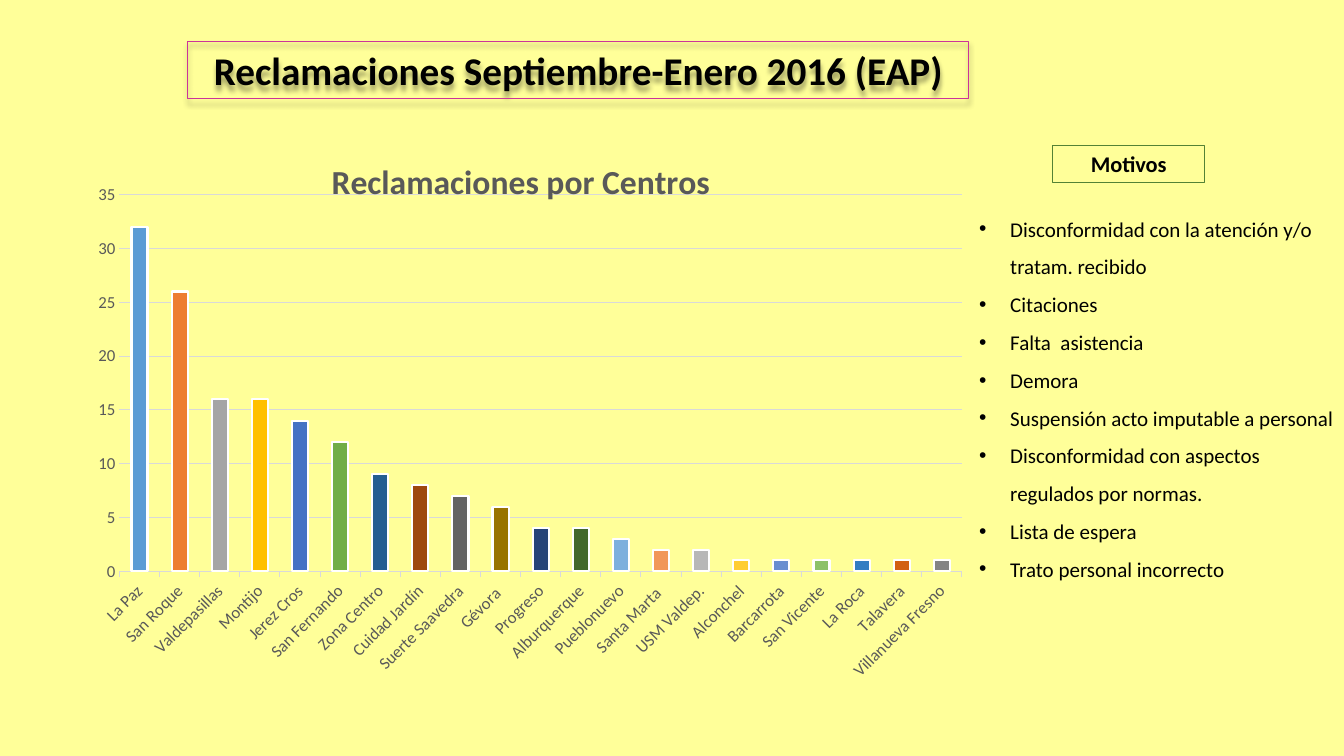
from dataclasses import dataclass

from lxml import etree
from pptx import Presentation
from pptx.chart.data import CategoryChartData
from pptx.dml.color import RGBColor
from pptx.enum.chart import XL_CHART_TYPE, XL_TICK_MARK
from pptx.enum.shapes import MSO_SHAPE
from pptx.enum.text import MSO_ANCHOR, MSO_AUTO_SIZE, PP_ALIGN
from pptx.oxml import parse_xml
from pptx.oxml.ns import nsdecls, qn
from pptx.util import Inches, Pt

COLUMN = XL_CHART_TYPE.COLUMN_CLUSTERED
TICK_OUTSIDE, TICK_NONE = XL_TICK_MARK.OUTSIDE, XL_TICK_MARK.NONE
RECTANGLE = MSO_SHAPE.RECTANGLE
TOP, MIDDLE = MSO_ANCHOR.TOP, MSO_ANCHOR.MIDDLE
NO_AUTOFIT = MSO_AUTO_SIZE.NONE
LEFT, CENTER = PP_ALIGN.LEFT, PP_ALIGN.CENTER
TITLE_AND_CONTENT = 1


@dataclass(frozen=True)
class Theme:
    font: str = "Calibri"
    background: str = "FFFF99"
    text: str = "000000"
    chart_text: str = "595959"
    grid: str = "D9D9D9"
    bar_border: str = "FFFFFF"
    title_border: str = "CC3399"
    label_border: str = "548235"
    title_size: float = 28
    chart_title_size: float = 24
    label_size: float = 16
    list_size: float = 15
    axis_size: float = 12
    thin_line: float = 0.75
    bar_line: float = 1.5


# Health centre, complaints, bar colour
CENTRES = [
    ("La Paz", 32, "5B9BD5"),
    ("San Roque", 26, "ED7D31"),
    ("Valdepasillas", 16, "A5A5A5"),
    ("Montijo", 16, "FFC000"),
    ("Jerez Cros", 14, "4472C4"),
    ("San Fernando", 12, "70AD47"),
    ("Zona Centro", 9, "255E91"),
    ("Cuidad Jardín", 8, "9E480E"),
    ("Suerte Saavedra", 7, "636363"),
    ("Gévora ", 6, "997300"),
    ("Progreso", 4, "264478"),
    ("Alburquerque", 4, "43682B"),
    ("Pueblonuevo", 3, "7CAFDD"),
    ("Santa Marta ", 2, "F1975A"),
    ("USM Valdep.", 2, "B7B7B7"),
    ("Alconchel", 1, "FFCD33"),
    ("Barcarrota", 1, "698ED0"),
    ("San Vicente", 1, "8CC168"),
    ("La Roca", 1, "327DC2"),
    ("Talavera", 1, "D26012"),
    ("Villanueva Fresno", 1, "848484"),
]

REASONS = [
    "Disconformidad con la atención y/o tratam. recibido",
    "Citaciones",
    "Falta  asistencia",
    "Demora",
    "Suspensión acto imputable a personal",
    "Disconformidad con aspectos regulados por normas.",
    "Lista de espera",
    "Trato personal incorrecto",
]


class SlideBuilder:
    def __init__(self, slide, theme):
        self.slide = slide
        self.theme = theme
        self.fill(slide.background.fill, theme.background)

    def fill(self, fill, color):
        fill.solid()
        fill.fore_color.rgb = RGBColor.from_string(color)

    def line(self, line, color, width):
        self.fill(line.fill, color)
        line.width = Pt(width)

    def font(self, font, size, color, bold=False):
        font.name = self.theme.font
        font.size = Pt(size)
        font.bold = bold
        font.color.rgb = RGBColor.from_string(color)

    def place(self, shape, box):
        shape.left, shape.top, shape.width, shape.height = map(Inches, box)

    def add_text(self, shape, lines, size, bold, align, anchor):
        frame = shape.text_frame
        frame.word_wrap = True
        frame.auto_size = NO_AUTOFIT
        frame.vertical_anchor = anchor
        for index, line in enumerate(lines):
            paragraph = frame.add_paragraph() if index else frame.paragraphs[0]
            paragraph.alignment = align
            paragraph.space_before = Pt(0)
            run = paragraph.add_run()
            run.text = line
            self.font(run.font, size, self.theme.text, bold)
        return frame.paragraphs

    def title(self, text, box):
        shape = self.slide.shapes.title
        self.place(shape, box)
        self.line(shape.line, self.theme.title_border, self.theme.thin_line)
        self.add_text(shape, [text], self.theme.title_size, True, CENTER, MIDDLE)
        shape._element.spPr.append(parse_xml(
            f'<a:effectLst {nsdecls("a")}><a:outerShdw blurRad="{Pt(4)}" dist="{Pt(3)}" '
            'dir="5400000" algn="t" rotWithShape="0"><a:srgbClr val="000000">'
            '<a:alpha val="40000"/></a:srgbClr></a:outerShdw></a:effectLst>'))

    def label(self, text, box):
        shape = self.slide.shapes.add_shape(RECTANGLE, *map(Inches, box))
        shape.shadow.inherit = False
        shape.fill.background()
        self.line(shape.line, self.theme.label_border, self.theme.thin_line)
        self.add_text(shape, [text], self.theme.label_size, True, CENTER, MIDDLE)

    def bullets(self, lines, box):
        shape = self.slide.placeholders[1]
        self.place(shape, box)
        indent = Inches(0.31)
        for paragraph in self.add_text(shape, lines, self.theme.list_size, False, LEFT, TOP):
            paragraph.line_spacing = 1.5
            properties = paragraph._p.get_or_add_pPr()
            properties.set("marL", str(indent))
            properties.set("indent", str(-indent))
            etree.SubElement(properties, qn("a:buFont")).set("typeface", "Arial")
            etree.SubElement(properties, qn("a:buChar")).set("char", "•")

    def manual_layout(self, parent, position, **settings):
        """Place a chart part by fractions of the chart's size."""
        for old in parent.findall(qn("c:layout")):
            parent.remove(old)
        layout = etree.Element(qn("c:layout"))
        manual = etree.SubElement(layout, qn("c:manualLayout"))
        values = {**settings, "xMode": "edge", "yMode": "edge", **position}
        for name, value in values.items():
            etree.SubElement(manual, qn(f"c:{name}")).set("val", str(value))
        return layout

    def column_chart(self, title, rows, box):
        theme = self.theme
        data = CategoryChartData()
        data.categories = [name for name, _, _ in rows]
        data.add_series("Reclamaciones", [count for _, count, _ in rows])
        chart = self.slide.shapes.add_chart(COLUMN, *map(Inches, box), data).chart
        chart.has_legend = False
        self.font(chart.font, theme.axis_size, theme.chart_text)

        # Chart title and plot area
        run = chart.chart_title.text_frame.paragraphs[0].add_run()
        run.text = title
        self.font(run.font, theme.chart_title_size, theme.chart_text, True)
        chart.chart_title.include_in_layout = False
        title_element = chart.chart_title._element
        title_element.find(qn("c:tx")).addnext(
            self.manual_layout(title_element, {"x": 0.28, "y": 0.04}))
        plot_area = chart._chartSpace.chart.plotArea
        plot_area.insert(0, self.manual_layout(
            plot_area, {"x": 0.05, "y": 0.11, "w": 0.94, "h": 0.63}, layoutTarget="inner"))

        # Bars
        plot = chart.plots[0]
        plot.gap_width = 150
        plot.vary_by_categories = True
        for index, (_, _, color) in enumerate(rows):
            bar = plot.series[0].points[index].format
            self.fill(bar.fill, color)
            self.line(bar.line, theme.bar_border, theme.bar_line)

        # Axes
        category_axis, value_axis = chart.category_axis, chart.value_axis
        for axis in (category_axis, value_axis):
            self.font(axis.tick_labels.font, theme.axis_size, theme.chart_text)
        category_axis.major_tick_mark = TICK_OUTSIDE
        self.line(category_axis.format.line, theme.grid, theme.thin_line)
        category_axis._element.txPr.bodyPr.set("rot", "-2700000")
        value_axis.major_tick_mark = TICK_NONE
        value_axis.minimum_scale, value_axis.maximum_scale = 0, 35
        value_axis.major_unit = 5
        value_axis.format.line.fill.background()
        self.line(value_axis.major_gridlines.format.line, theme.grid, theme.thin_line)


def main():
    presentation = Presentation()
    presentation.slide_width, presentation.slide_height = Inches(13.33), Inches(7.5)
    slide = presentation.slides.add_slide(presentation.slide_layouts[TITLE_AND_CONTENT])
    builder = SlideBuilder(slide, Theme())
    builder.title("Reclamaciones Septiembre-Enero 2016 (EAP)", (1.86, 0.41, 7.75, 0.57))
    builder.column_chart("Reclamaciones por Centros", CENTRES, (0.74, 1.28, 8.89, 5.93))
    builder.bullets(REASONS, (9.61, 1.97, 3.73, 4.12))
    builder.label("Motivos", (10.44, 1.44, 1.51, 0.37))
    presentation.save("out.pptx")


if __name__ == "__main__":
    main()
